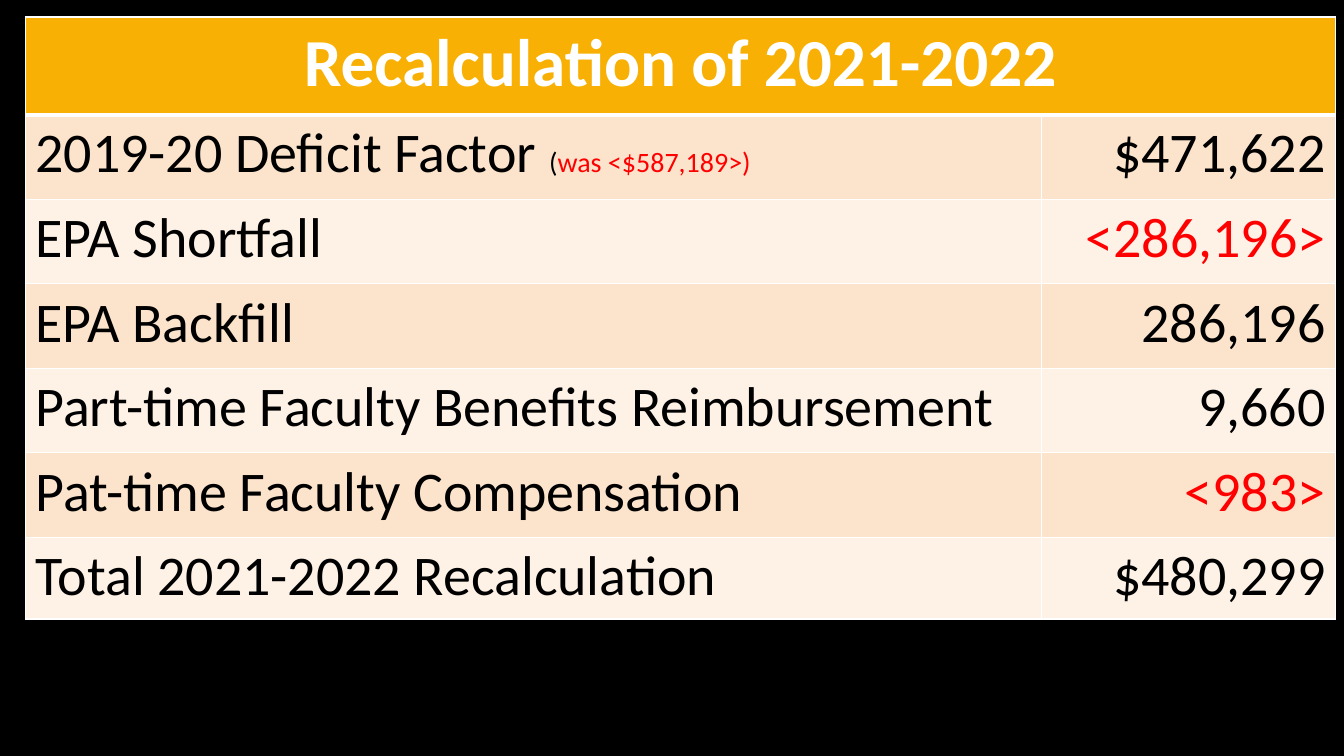
from lxml.etree import SubElement
from pptx import Presentation
from pptx.dml.color import RGBColor
from pptx.enum.text import PP_ALIGN
from pptx.oxml.ns import qn
from pptx.util import Cm, Pt

# Content: each row is (label runs, amount run); a run is (text, style)
TITLE = "Recalculation of 2021-2022"
ROWS = [
    ([("2019-20 Deficit Factor ", "body"), ("(", "note"),
      ("was <$587,189>)", "rednote")], ("$471,622", "body")),
    ([("EPA Shortfall", "body")], ("<286,196>", "red")),
    ([("EPA Backfill", "body")], ("286,196", "body")),
    ([("Part-time Faculty Benefits Reimbursement", "body")], ("9,660", "body")),
    ([("Pat-time Faculty Compensation", "body")], ("<983>", "red")),
    ([("Total 2021-2022 Recalculation", "body")], ("$480,299", "body")),
]

# Theme: colours, type sizes and rules
THEME = {
    "font": "Calibri",
    "back": "000000",
    "head": "F8B004",
    "bands": ["FCE4CC", "FEF2E7"],
    "line": "FFFFFF",
    "thin": 1,
    "thick": 3,
    "text": {
        "title": {"size": 48, "bold": True, "color": "FFFFFF"},
        "body": {"size": 40, "bold": False, "color": "000000"},
        "red": {"size": 40, "bold": False, "color": "FF0000"},
        "note": {"size": 20, "bold": False, "color": "000000"},
        "rednote": {"size": 20, "bold": False, "color": "FF0000"},
    },
}

# Layout in centimetres
SLIDE = (33.87, 19.05)
LEFT, TOP = 0.64, 0.43
COLS = [25.6, 7.42]
TALL = [2.46] + [2.13] * (len(ROWS) - 1) + [2.06]


def edge(cell, sides):
    """Draw cell borders from a dict of side to width in points."""
    props = cell._tc.get_or_add_tcPr()
    for side, width in sides.items():
        line = SubElement(props, qn("a:ln" + side), w=str(Pt(width)))
        paint = SubElement(line, qn("a:solidFill"))
        SubElement(paint, qn("a:srgbClr"), val=THEME["line"])


def write(cell, runs, align):
    para = cell.text_frame.paragraphs[0]
    para.alignment = align
    for text, style in runs:
        look = THEME["text"][style]
        run = para.add_run()
        run.text = text
        form = {"name": THEME["font"], "size": Pt(look["size"]),
                "bold": look["bold"]}
        for key, value in form.items():
            setattr(run.font, key, value)
        run.font.color.rgb = RGBColor.from_string(look["color"])


def tint(fill, color):
    fill.solid()
    fill.fore_color.rgb = RGBColor.from_string(color)


def main():
    deck = Presentation()
    deck.slide_width, deck.slide_height = map(Cm, SLIDE)
    slide = deck.slides.add_slide(deck.slide_layouts[6])
    tint(slide.background.fill, THEME["back"])

    # Table grid
    frame = slide.shapes.add_table(len(TALL), len(COLS), Cm(LEFT), Cm(TOP),
                                   Cm(sum(COLS)), Cm(sum(TALL)))
    table = frame.table
    for col, width in zip(table.columns, COLS):
        col.width = Cm(width)
    for row, height in zip(table.rows, TALL):
        row.height = Cm(height)

    # Borders and fills, with a thick rule under the heading
    thin, thick = THEME["thin"], THEME["thick"]
    for index, row in enumerate(table.rows):
        color = THEME["bands"][(index - 1) % 2] if index else THEME["head"]
        for cell in row.cells:
            edge(cell, {"L": thin, "R": thin,
                        "T": thick if index == 1 else thin,
                        "B": thick if index == 0 else thin})
            tint(cell.fill, color)

    # Heading and amounts
    head = table.cell(0, 0)
    head.merge(table.cell(0, len(COLS) - 1))
    write(head, [(TITLE, "title")], PP_ALIGN.CENTER)
    for index, (label, amount) in enumerate(ROWS, 1):
        write(table.cell(index, 0), label, PP_ALIGN.LEFT)
        write(table.cell(index, 1), [amount], PP_ALIGN.RIGHT)

    deck.save("out.pptx")


if __name__ == "__main__":
    main()
